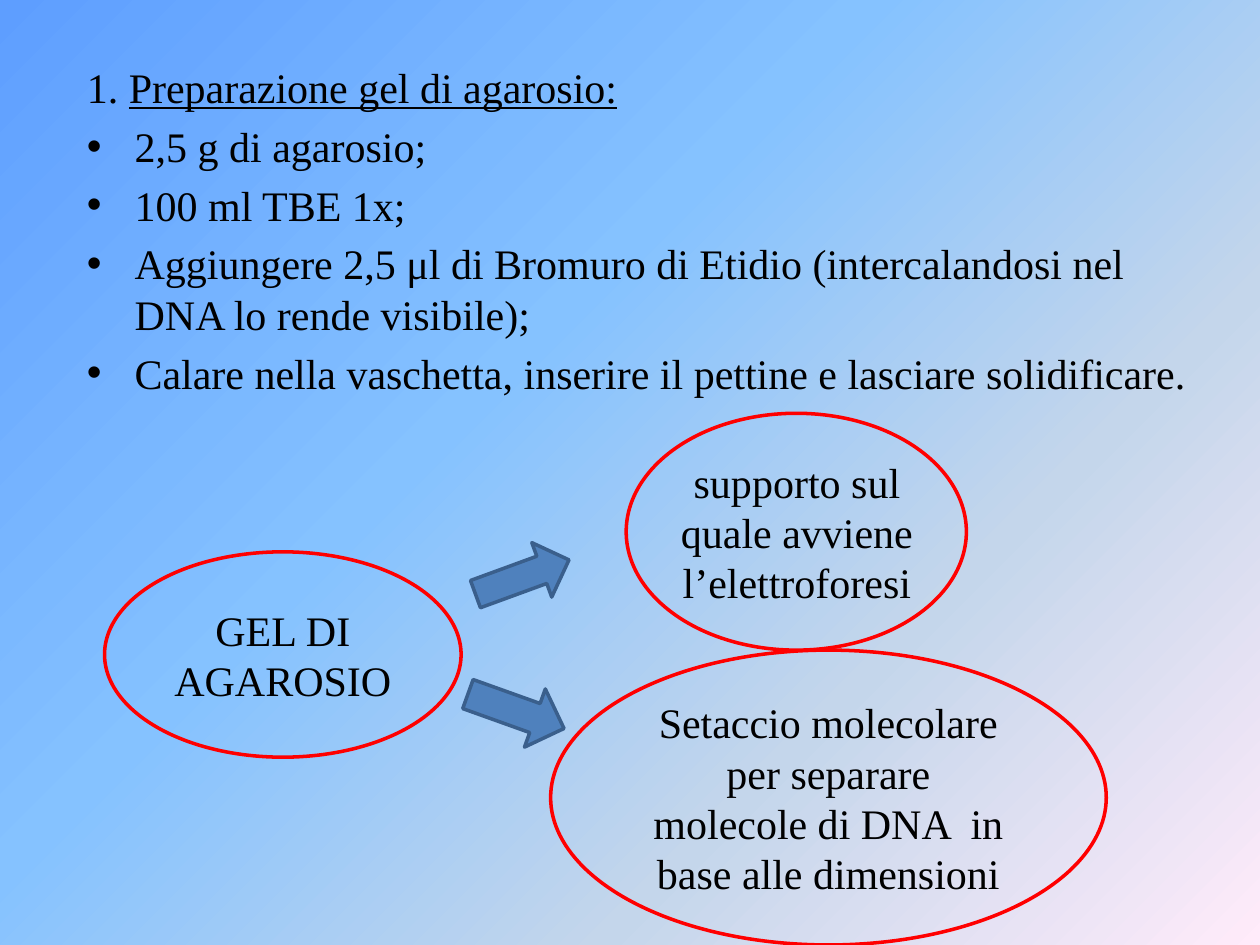
from lxml import etree
from pptx import Presentation
from pptx.dml.color import RGBColor
from pptx.enum.shapes import MSO_SHAPE
from pptx.enum.text import MSO_ANCHOR, PP_ALIGN
from pptx.oxml.ns import qn
from pptx.util import Inches, Pt

ELLIPSE, ARROW = MSO_SHAPE.OVAL, MSO_SHAPE.RIGHT_ARROW
CENTER, MIDDLE, TOP = PP_ALIGN.CENTER, MSO_ANCHOR.MIDDLE, MSO_ANCHOR.TOP

FONT = "Times New Roman"
BLACK, RED, BLUE, DARK_BLUE = "000000", "FF0000", "4F81BD", "3A5F8C"
BACKGROUND_STOPS = [(0, "5E9EFF"), (40, "85C2FF"), (70, "C4D6EB"), (100, "FFEBFA")]

HEADING = ("1. ", "Preparazione gel di agarosio:")
STEPS = [
    "2,5 g di agarosio;",
    "100 ml TBE 1x;",
    "Aggiungere 2,5 μl di Bromuro di Etidio (intercalandosi nel DNA lo rende visibile);",
    "Calare nella vaschetta, inserire il pettine e lasciare solidificare.",
]


def color(hex_string):
    return RGBColor.from_string(hex_string)


def place(box):
    return [Inches(length) for length in box]


def style_run(run, underline=False):
    run.font.name = FONT
    run.font.size = Pt(24)
    run.font.color.rgb = color(BLACK)
    run.font.underline = underline


def paint_background(slide):
    fill = slide.background.fill
    fill.gradient()
    gradient = slide.element.find(".//" + qn("a:gradFill"))
    stops = gradient.find(qn("a:gsLst"))
    for stop in list(stops):
        stops.remove(stop)
    for percent, hex_string in BACKGROUND_STOPS:
        stop = etree.SubElement(stops, qn("a:gs"), pos=str(percent * 1000))
        etree.SubElement(stop, qn("a:srgbClr"), val=hex_string)
    fill.gradient_angle = 315


def add_bullet(paragraph):
    indent = Inches(0.38)
    properties = paragraph._p.get_or_add_pPr()
    properties.set("marL", str(indent))
    properties.set("indent", str(-indent))
    etree.SubElement(properties, qn("a:buFont"), typeface="Arial")
    etree.SubElement(properties, qn("a:buChar"), char="•")


def add_preparation(slide, box):
    frame = slide.shapes.add_textbox(*place(box)).text_frame
    frame.word_wrap = True
    heading = frame.paragraphs[0]
    for text, underline in zip(HEADING, (False, True)):
        run = heading.add_run()
        run.text = text
        style_run(run, underline)
    for step in STEPS:
        paragraph = frame.add_paragraph()
        paragraph.text = step
        style_run(paragraph.runs[0])
        paragraph.space_before = Pt(4.8)
        add_bullet(paragraph)
    heading.space_before = Pt(4.8)


def write_centered(shape, text, anchor):
    frame = shape.text_frame
    frame.word_wrap = True
    frame.vertical_anchor = anchor
    frame.text = text
    frame.paragraphs[0].alignment = CENTER
    style_run(frame.paragraphs[0].runs[0])


def add_outlined(slide, kind, box, line_color):
    shape = slide.shapes.add_shape(kind, *place(box))
    shape.shadow.inherit = False
    shape.fill.background()
    shape.line.color.rgb = color(line_color)
    shape.line.width = Pt(2)
    return shape


def add_arrow(slide, box, rotation):
    arrow = add_outlined(slide, ARROW, box, DARK_BLUE)
    arrow.fill.solid()
    arrow.fill.fore_color.rgb = color(BLUE)
    arrow.rotation = rotation


def add_gel_diagram(slide, box):
    """Gel ellipse on the left, with arrows to its two functions on the right."""
    left, top, width, height = box
    add_arrow(slide, (left + 2.92, top + 1.07, 0.79, 0.46), 339.9)
    gel = add_outlined(slide, ELLIPSE, (left, top + 1.1, 2.83, 1.63), RED)
    write_centered(gel, "GEL DI AGAROSIO", MIDDLE)
    add_arrow(slide, (left + 2.86, top + 2.12, 0.81, 0.49), 19.7)

    add_outlined(slide, ELLIPSE, (left + 4.14, top, 2.7, 1.88), RED)
    support = slide.shapes.add_textbox(*place((left + 4.43, top + 0.29, 2.13, 1.31)))
    write_centered(support, "supporto sul quale avviene l’elettroforesi", TOP)

    sieve_box = (left + width - 4.41, top + height - 2.34, 4.41, 2.34)
    sieve = add_outlined(slide, ELLIPSE, sieve_box, RED)
    write_centered(
        sieve,
        "Setaccio molecolare per separare molecole di DNA  in base alle dimensioni",
        MIDDLE,
    )


def main():
    deck = Presentation()
    deck.slide_width, deck.slide_height = Inches(10), Inches(7.5)
    slide = deck.slides.add_slide(deck.slide_layouts[6])
    paint_background(slide)
    add_preparation(slide, (0.59, 0.44, 8.99, 6.26))
    add_gel_diagram(slide, (0.83, 3.28, 7.95, 4.22))
    deck.save("out.pptx")


if __name__ == "__main__":
    main()
